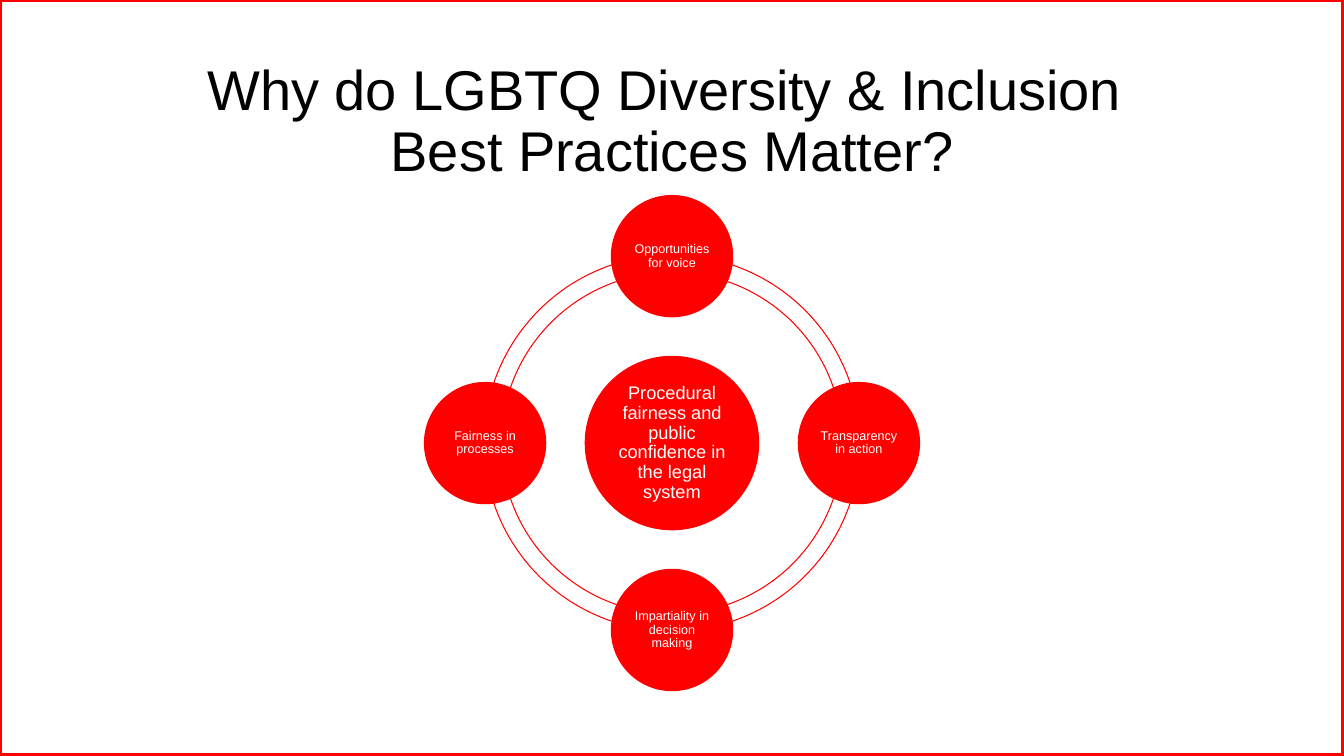
from pptx import Presentation
from pptx.dml.color import RGBColor
from pptx.enum.shapes import MSO_SHAPE as Preset
from pptx.enum.text import MSO_ANCHOR as Anchor, PP_ALIGN as Align
from pptx.util import Cm, Pt

RED, WHITE, BLACK = "FF0000", "FFFFFF", "000000"
SLIDE_W, SLIDE_H = 33.87, 19.05
QUARTER = 54  # a quarter turn in block arc adjustment units


def color(hex_string):
    return RGBColor.from_string(hex_string)


def add_outline(slide, preset, box, line_width, fill=None):
    shape = slide.shapes.add_shape(preset, *map(Cm, box))
    shape.shadow.inherit = False
    if fill:
        shape.fill.solid()
        shape.fill.fore_color.rgb = color(fill)
    else:
        shape.fill.background()
    shape.line.color.rgb = color(RED)
    shape.line.width = Pt(line_width)
    return shape


def write(frame, text, size, text_color, anchor):
    frame.word_wrap = True
    frame.vertical_anchor = anchor
    paragraph = frame.paragraphs[0]
    paragraph.text = text
    paragraph.alignment = Align.CENTER
    paragraph.line_spacing = 0.9
    paragraph.font.name = "Arial"
    paragraph.font.size = Pt(size)
    paragraph.font.color.rgb = color(text_color)


def add_title(slide, box, text):
    title = slide.shapes.add_textbox(*map(Cm, box))
    write(title.text_frame, text, 40, BLACK, Anchor.BOTTOM)


def add_disc(slide, center_x, center_y, diameter, text, size, inset):
    box = (center_x - diameter / 2, center_y - diameter / 2, diameter, diameter)
    disc = add_outline(slide, Preset.OVAL, box, 1, RED)
    frame = disc.text_frame
    frame.margin_left = frame.margin_right = Cm(inset)
    frame.margin_top = frame.margin_bottom = Cm(inset)
    write(frame, text, size, WHITE, Anchor.MIDDLE)


def add_radial_cycle(slide, box, core, themes):
    left, top, width, height = box
    center_x, center_y = left + width / 2, top + height / 2
    theme_diameter = width / 4.09
    orbit = (width - theme_diameter) / 2

    # Ring of four quarter arcs
    ring = width * 0.76
    ring_box = (center_x - ring / 2, center_y - ring / 2, ring, ring)
    for quarter in range(4):
        arc = add_outline(slide, Preset.BLOCK_ARC, ring_box, 0.75)
        arc.adjustments[0] = quarter * QUARTER
        arc.adjustments[1] = (quarter + 1) % 4 * QUARTER
        arc.adjustments[2] = 0.046

    # Core idea, then the themes clockwise from the top
    add_disc(slide, center_x, center_y, width * 0.35, core, 13, 0.05)
    directions = [(0, -1), (1, 0), (0, 1), (-1, 0)]
    for (dx, dy), theme in zip(directions, themes):
        add_disc(slide, center_x + dx * orbit, center_y + dy * orbit,
                 theme_diameter, theme, 9, 0.03)


def main():
    deck = Presentation()
    deck.slide_width, deck.slide_height = Cm(SLIDE_W), Cm(SLIDE_H)
    slide = deck.slides.add_slide(deck.slide_layouts[6])

    # Slide frame
    add_outline(slide, Preset.RECTANGLE, (0, 0, SLIDE_W, SLIDE_H), 3.5)

    add_title(slide, (2.33, 1.06, 29.21, 3.68),
              "Why do LGBTQ Diversity & Inclusion \vBest Practices Matter?")

    add_radial_cycle(
        slide, (10.7, 4.93, 12.47, 12.47),
        "Procedural fairness and public confidence in the legal system",
        ["Opportunities for voice", "Transparency in action",
         "Impartiality in decision making", "Fairness in processes"])

    deck.save("out.pptx")


if __name__ == "__main__":
    main()
